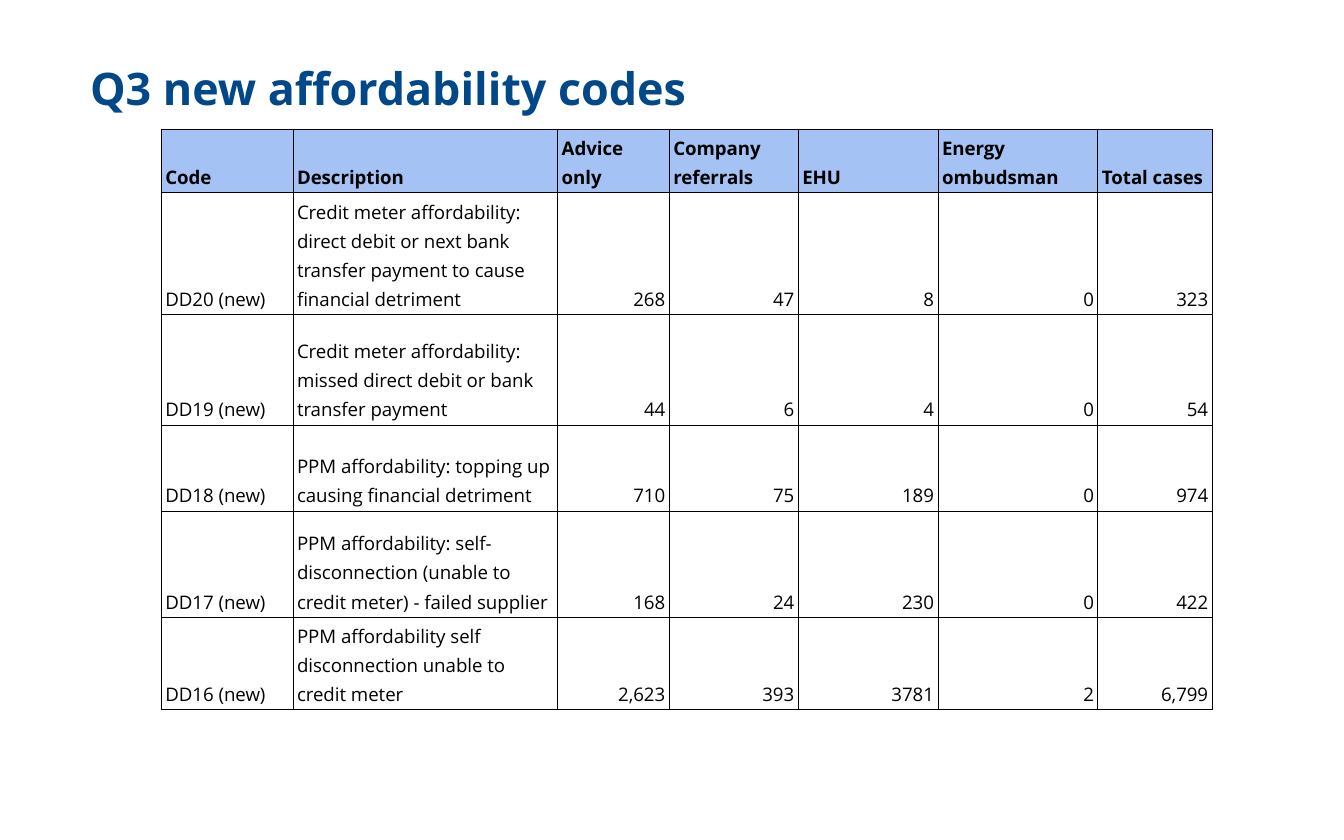
from lxml.etree import SubElement
from pptx import Presentation
from pptx.dml.color import RGBColor
from pptx.enum.text import MSO_ANCHOR as Anchor, PP_ALIGN as Align
from pptx.oxml.ns import qn
from pptx.util import Inches, Pt

TITLE = "Q3 new affordability codes"
HEADERS = ["Code", "Description", "Advice only", "Company referrals", "EHU",
           "Energy ombudsman", "Total cases"]
CASES = [
    ("DD20 (new)", "Credit meter affordability: direct debit or next bank transfer "
     "payment to cause financial detriment", "268", "47", "8", "0", "323"),
    ("DD19 (new)", "Credit meter affordability: missed direct debit or bank transfer "
     "payment", "44", "6", "4", "0", "54"),
    ("DD18 (new)", "PPM affordability: topping up causing financial detriment",
     "710", "75", "189", "0", "974"),
    ("DD17 (new)", "PPM affordability: self-disconnection (unable to credit meter) "
     "- failed supplier", "168", "24", "230", "0", "422"),
    ("DD16 (new)", "PPM affordability self disconnection unable to credit meter",
     "2,623", "393", "3781", "2", "6,799"),
]
COLUMN_WIDTHS = [0.98, 1.97, 0.83, 0.96, 1.04, 1.19, 0.85]
ROW_HEIGHTS = [0.44, 0.91, 0.82, 0.64, 0.79, 0.64]
TEXT_COLUMNS = 2
FONT = "Open Sans"
NAVY, BLACK, WHITE, HEADER_BLUE = "004888", "000000", "FFFFFF", "A4C2F4"


def color(value):
    """Turn a hex string into a colour."""
    return RGBColor.from_string(value)


def write(frame, text, size=10, ink=BLACK, bold=False, align=Align.LEFT, spacing=1.0):
    """Put one formatted paragraph into a text frame."""
    para = frame.paragraphs[0]
    para.alignment, para.line_spacing = align, spacing
    span = para.add_run()
    span.text = text
    span.font.name, span.font.size, span.font.bold = FONT, Pt(size), bold
    span.font.color.rgb = color(ink)


def set_insets(box, sides, ends):
    """Set the inner margins of a cell or text frame."""
    box.margin_left = box.margin_right = Inches(sides)
    box.margin_top = box.margin_bottom = Inches(ends)


def add_borders(cell, ink=BLACK, width=0.5):
    """Draw a line on all four sides of a cell."""
    properties = cell._tc.get_or_add_tcPr()
    for side in ("a:lnL", "a:lnR", "a:lnT", "a:lnB"):
        line = SubElement(properties, qn(side), w=str(Pt(width)))
        SubElement(SubElement(line, qn("a:solidFill")), qn("a:srgbClr"), val=ink)


def add_title(page):
    """Place and format the slide title."""
    title = page.shapes.title
    title.left, title.top = Inches(0.57), Inches(0.35)
    title.width, title.height = Inches(9), Inches(1.04)
    frame = title.text_frame
    frame.word_wrap, frame.vertical_anchor = True, Anchor.TOP
    set_insets(frame, 0.1, 0.1)
    write(frame, TITLE, size=24, ink=NAVY, bold=True)


def add_case_table(page):
    """Build the table of cases by affordability code."""
    rows = [HEADERS, *CASES]
    table = page.shapes.add_table(
        len(rows), len(HEADERS), Inches(1.2), Inches(0.96),
        Inches(sum(COLUMN_WIDTHS)), Inches(sum(ROW_HEIGHTS))).table
    for column, width in zip(table.columns, COLUMN_WIDTHS):
        column.width = Inches(width)
    for row, height in zip(table.rows, ROW_HEIGHTS):
        row.height = Inches(height)
    for r, values in enumerate(rows):
        for c, text in enumerate(values):
            cell, header = table.cell(r, c), r == 0
            add_borders(cell)
            cell.fill.solid()
            cell.fill.fore_color.rgb = color(HEADER_BLUE if header else WHITE)
            cell.vertical_anchor = Anchor.BOTTOM
            set_insets(cell, 0.03, 0.02)
            align = Align.LEFT if header or c < TEXT_COLUMNS else Align.RIGHT
            write(cell.text_frame, text, bold=header, align=align, spacing=1.15)


def main():
    """Build and save the slide."""
    deck = Presentation()
    deck.slide_width, deck.slide_height = Inches(10), Inches(6.25)
    page = deck.slides.add_slide(deck.slide_layouts[5])
    add_title(page)
    add_case_table(page)
    deck.save("out.pptx")


if __name__ == "__main__":
    main()
